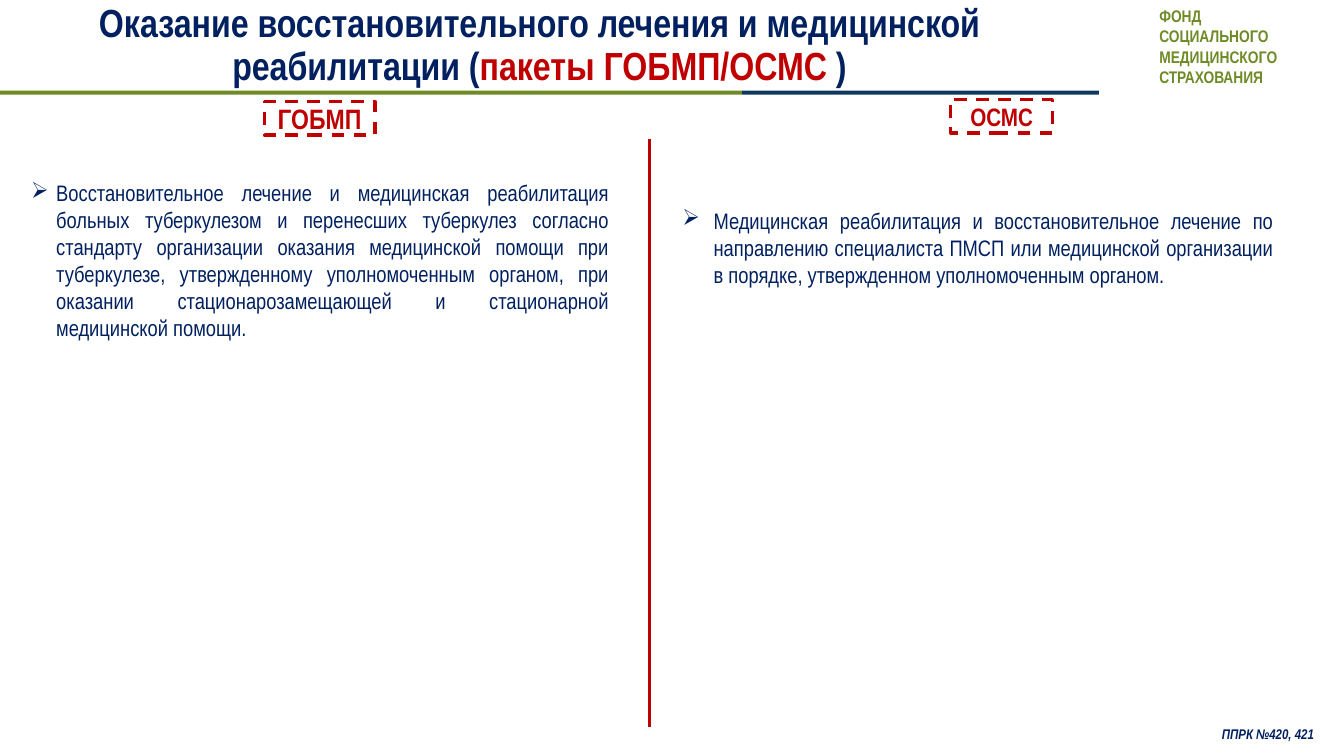
from dataclasses import dataclass
from typing import NamedTuple

from lxml import etree
from pptx import Presentation
from pptx.dml.color import RGBColor
from pptx.enum import dml, shapes, text
from pptx.oxml import ns
from pptx.util import Emu, Pt

PX = 9144  # 100 px to the inch


@dataclass(frozen=True)
class Theme:
    font: str = "Arial Narrow"
    navy: str = "002060"
    red: str = "C00000"
    green: str = "6F8B27"
    steel: str = "0E385E"
    white: str = "FFFFFF"
    title_size: int = 28
    body_size: int = 16
    fund_size: int = 12
    source_size: int = 10
    rule_width: float = 2.25


class Box(NamedTuple):
    left: int
    top: int
    width: int
    height: int


class Bar(NamedTuple):
    box: Box
    color: str


class Badge(NamedTuple):
    box: Box
    label: str
    size: int


class Item(NamedTuple):
    box: Box
    indent: int
    anchor: text.MSO_ANCHOR
    wording: str


THEME = Theme()
TOP, MIDDLE = text.MSO_ANCHOR.TOP, text.MSO_ANCHOR.MIDDLE
CENTER, JUSTIFY = text.PP_ALIGN.CENTER, text.PP_ALIGN.JUSTIFY

BARS = [
    Bar(Box(0, 90, 736, 4), THEME.green),
    Bar(Box(736, 90, 354, 4), THEME.steel),
]
FUND_LINES = ["ФОНД", "СОЦИАЛЬНОГО", "МЕДИЦИНСКОГО", "СТРАХОВАНИЯ"]
TITLE_PARTS = [
    ("Оказание восстановительного лечения и медицинской реабилитации (", THEME.navy),
    ("пакеты ГОБМП/ОСМС ", THEME.red),
    (")", THEME.navy),
]
ITEMS = [
    Item(Box(21, 173, 593, 172), 25, TOP,
         "Восстановительное лечение и медицинская реабилитация больных туберкулезом "
         "и перенесших туберкулез согласно стандарту организации оказания медицинской "
         "помощи при туберкулезе, утвержденному уполномоченным органом, при оказании "
         "стационарозамещающей и стационарной медицинской помощи."),
    Item(Box(667, 176, 606, 139), 31, MIDDLE,
         "Медицинская реабилитация и восстановительное лечение по направлению "
         "специалиста ПМСП или медицинской организации в порядке, утвержденном "
         "уполномоченным органом."),
]
BADGES = [
    Badge(Box(262, 101, 110, 33), "ГОБМП", 20),
    Badge(Box(943, 99, 101, 33), "ОСМС", 18),
]


def emu(box: Box) -> list[Emu]:
    return [Emu(length * PX) for length in box]


def rgb(color: str) -> RGBColor:
    return RGBColor.from_string(color)


def set_font(paragraph, size: int, color: str | None = None,
             bold: bool = False, italic: bool = False) -> None:
    font = paragraph.font
    font.name, font.size = THEME.font, Pt(size)
    font.bold, font.italic = bold, italic
    if color:
        font.color.rgb = rgb(color)


def add_rect(slide, box: Box, fill: str | None = None):
    rect = slide.shapes.add_shape(shapes.MSO_SHAPE.RECTANGLE, *emu(box))
    rect.shadow.inherit = False
    rect.line.fill.background()
    if fill:
        rect.fill.solid()
        rect.fill.fore_color.rgb = rgb(fill)
    else:
        rect.fill.background()
    return rect


def add_frame(slide, box: Box, anchor: text.MSO_ANCHOR = MIDDLE):
    frame = slide.shapes.add_textbox(*emu(box)).text_frame
    frame.word_wrap = True
    frame.vertical_anchor = anchor
    return frame


def add_fund(slide) -> None:
    frame = add_rect(slide, Box(1140, 1, 190, 91), THEME.white).text_frame
    frame.word_wrap = True
    frame.vertical_anchor = TOP
    frame.text = "\n".join(FUND_LINES)
    for paragraph in frame.paragraphs:
        paragraph.alignment = text.PP_ALIGN.LEFT
        set_font(paragraph, THEME.fund_size, THEME.green, bold=True)


def add_title(slide) -> None:
    paragraph = add_frame(slide, Box(20, 9, 1030, 74)).paragraphs[0]
    paragraph.alignment = CENTER
    paragraph.line_spacing = 0.9
    set_font(paragraph, THEME.title_size, bold=True)
    for wording, color in TITLE_PARTS:
        run = paragraph.add_run()
        run.text = wording
        run.font.color.rgb = rgb(color)


def add_item(slide, item: Item) -> None:
    paragraph = add_frame(slide, item.box, item.anchor).paragraphs[0]
    paragraph.text = item.wording
    paragraph.alignment = JUSTIFY
    properties = paragraph._p.get_or_add_pPr()
    properties.set("marL", str(item.indent * PX))
    properties.set("indent", str(-item.indent * PX))
    etree.SubElement(properties, ns.qn("a:buChar"), char="➢")
    set_font(paragraph, THEME.body_size, THEME.navy)


def add_divider(slide) -> None:
    x, top, bottom = 644, 138, 721
    divider = slide.shapes.add_connector(
        shapes.MSO_CONNECTOR.STRAIGHT, *emu((x, top, x, bottom)))
    divider.line.color.rgb = rgb(THEME.red)
    divider.line.width = Pt(THEME.rule_width)
    etree.SubElement(divider._element.spPr, ns.qn("a:effectLst"))


def add_badge(slide, badge: Badge) -> None:
    rect = add_rect(slide, badge.box)
    rect.line.color.rgb = rgb(THEME.red)
    rect.line.width = Pt(THEME.rule_width)
    rect.line.dash_style = dml.MSO_LINE.DASH
    rect.text_frame.vertical_anchor = MIDDLE
    paragraph = rect.text_frame.paragraphs[0]
    paragraph.text = badge.label
    paragraph.alignment = CENTER
    set_font(paragraph, badge.size, THEME.red, bold=True)


def add_source(slide) -> None:
    paragraph = add_frame(slide, Box(1202, 711, 125, 36)).paragraphs[0]
    paragraph.text = "ППРК №420, 421"
    paragraph.line_spacing = 0.9
    set_font(paragraph, THEME.source_size, THEME.navy, bold=True, italic=True)


def main() -> None:
    deck = Presentation()
    deck.slide_width, deck.slide_height = Emu(1333 * PX), Emu(750 * PX)
    slide = deck.slides.add_slide(deck.slide_layouts[6])
    for bar in BARS:
        add_rect(slide, bar.box, bar.color)
    add_fund(slide)
    add_title(slide)
    add_divider(slide)
    for item in ITEMS:
        add_item(slide, item)
    for badge in BADGES:
        add_badge(slide, badge)
    add_source(slide)
    deck.save("out.pptx")


if __name__ == "__main__":
    main()
